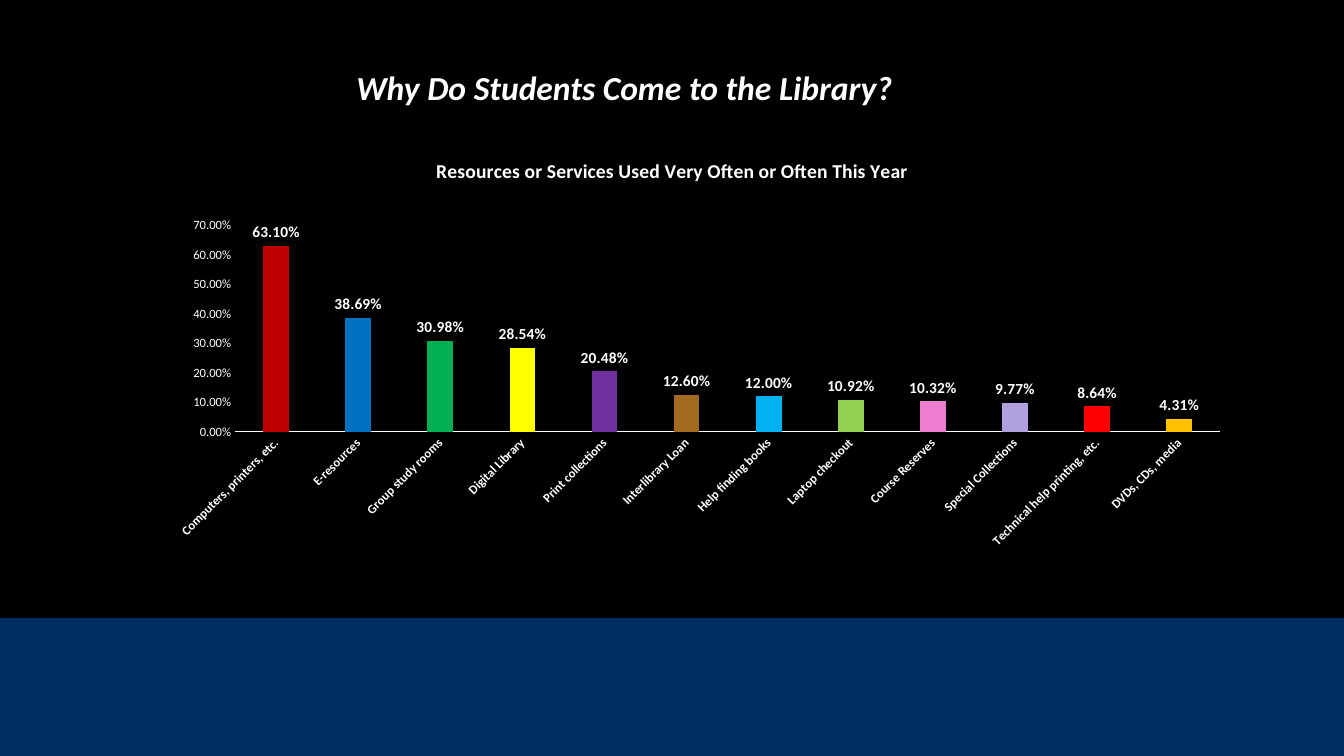
from dataclasses import dataclass

from lxml import etree
from pptx import Presentation
from pptx import util as u
from pptx.chart.data import CategoryChartData
from pptx.dml.color import RGBColor
from pptx.enum import chart as charts, shapes, text
from pptx.oxml import ns


@dataclass(frozen=True)
class Theme:
    """Colours, font and type sizes of the slide."""
    font: str = "Calibri"
    background: str = "000000"
    band: str = "002D62"
    ink: str = "FFFFFF"
    series: str = "29AF8C"
    heading: int = 24
    chart_title: int = 14
    chart_text: int = 10
    axis: int = 9
    value_label: int = 11


THEME = Theme()
PERCENT = "0.00%"
USAGE = [
    ("Computers, printers, etc.", 0.631, "C00000"),
    ("E-resources", 0.3869, "0070C0"),
    ("Group study rooms", 0.3098, "00B050"),
    ("Digital Library", 0.2854, "FFFF00"),
    ("Print collections", 0.2048, "7030A0"),
    ("Interlibrary Loan", 0.126, "A26921"),
    ("Help finding books", 0.12, "00B0F0"),
    ("Laptop checkout", 0.1092, "92D050"),
    ("Course Reserves", 0.1032, "ED7DD0"),
    ("Special Collections", 0.0977, "B0A0DD"),
    ("Technical help printing, etc.", 0.0864, "FF0000"),
    ("DVDs, CDs, media", 0.0431, "FFC000"),
]


def paint(fill, colour):
    """Give a fill one solid colour."""
    fill.solid()
    fill.fore_color.rgb = RGBColor.from_string(colour)


def style(font, size, bold=False, italic=False):
    """Set a font in the theme's typeface and ink."""
    font.name, font.size = THEME.font, u.Pt(size)
    font.bold, font.italic = bold, italic
    font.color.rgb = RGBColor.from_string(THEME.ink)


def set_layout(parent, index, **settings):
    """Place a chart part by fractions of the chart area."""
    for old in parent.findall(ns.qn("c:layout")):
        parent.remove(old)
    layout = etree.Element(ns.qn("c:layout"))
    manual = etree.SubElement(layout, ns.qn("c:manualLayout"))
    for name, value in settings.items():
        etree.SubElement(manual, ns.qn(f"c:{name}")).set("val", str(value))
    parent.insert(index, layout)


def add_band(slide, *box):
    """Draw the coloured band in its box."""
    band = slide.shapes.add_shape(shapes.MSO_SHAPE.RECTANGLE, *box)
    band.shadow.inherit = False
    paint(band.fill, THEME.band)
    band.line.fill.background()


def add_heading(slide, heading, *box):
    """Write the centred heading at the top of its box."""
    frame = slide.shapes.add_textbox(*box).text_frame
    frame.word_wrap = True
    paragraph = frame.paragraphs[0]
    paragraph.alignment = text.PP_ALIGN.CENTER
    paragraph.line_spacing = 0.9
    run = paragraph.add_run()
    run.text = heading
    style(run.font, THEME.heading, bold=True, italic=True)


def style_axes(chart):
    """Format the category and value axes."""
    category, value = chart.category_axis, chart.value_axis
    for axis in (category, value):
        axis.has_major_gridlines = False
        axis.major_tick_mark = axis.minor_tick_mark = charts.XL_TICK_MARK.NONE
        style(axis.tick_labels.font, THEME.axis, bold=axis is category)
    paint(category.format.line.fill, THEME.ink)
    category.format.line.width = u.Pt(0.75)
    value.format.line.fill.background()
    value.minimum_scale, value.maximum_scale, value.major_unit = 0, 0.7, 0.1
    value.tick_labels.number_format = PERCENT
    value.tick_labels.number_format_is_linked = False
    body = chart.element.xpath(".//c:catAx/c:txPr/a:bodyPr")[0]
    body.set("rot", "-2700000")
    body.set("vert", "horz")


def style_columns(plot):
    """Colour each column and show its value."""
    plot.gap_width, plot.overlap = 219, -27
    plot.vary_by_categories = False
    series = plot.series[0]
    paint(series.format.fill, THEME.series)
    for index, (_, _, colour) in enumerate(USAGE):
        paint(series.points[index].format.fill, colour)
    labels = series.data_labels
    labels.show_value = True
    labels.position = charts.XL_LABEL_POSITION.OUTSIDE_END
    labels.number_format, labels.number_format_is_linked = PERCENT, False
    style(labels.font, THEME.value_label, bold=True)


def add_usage_chart(slide, title, *box):
    """Draw the column chart of library usage in its box."""
    data = CategoryChartData(number_format=PERCENT)
    data.categories = [name for name, _, _ in USAGE]
    data.add_series("Series 1", [value for _, value, _ in USAGE])
    kind = charts.XL_CHART_TYPE.COLUMN_CLUSTERED
    chart = slide.shapes.add_chart(kind, *box, data).chart
    style(chart.font, THEME.chart_text)
    chart.has_legend = False
    chart.has_title = True
    run = chart.chart_title.text_frame.paragraphs[0].add_run()
    run.text = title
    style(run.font, THEME.chart_title, bold=True)
    chart.chart_title.include_in_layout = False
    style_axes(chart)
    style_columns(chart.plots[0])
    set_layout(chart.element.xpath("c:chart/c:title")[0], 1,
               xMode="edge", yMode="edge", x=0.29, y=0.03)
    set_layout(chart.element.xpath("c:chart/c:plotArea")[0], 0,
               layoutTarget="inner", xMode="edge", yMode="edge",
               x=0.119, y=0.172, w=0.853, h=0.405)


def main():
    """Build and save the library slide."""
    presentation = Presentation()
    presentation.slide_width = u.Cm(33.87)
    presentation.slide_height = u.Cm(19.05)
    slide = presentation.slides.add_slide(presentation.slide_layouts[6])
    paint(slide.background.fill, THEME.background)
    band_top = u.Cm(15.57)
    add_band(slide, 0, band_top, presentation.slide_width,
             presentation.slide_height - band_top)
    add_heading(slide, "Why Do Students Come to the Library?",
                u.Cm(4.75), u.Cm(1.68), u.Cm(21.97), u.Cm(12.73))
    add_usage_chart(slide, "Resources or Services Used Very Often or Often This Year",
                    u.Cm(2.46), u.Cm(3.48), u.Cm(29.11), u.Cm(12.83))
    presentation.save("out.pptx")


if __name__ == "__main__":
    main()
